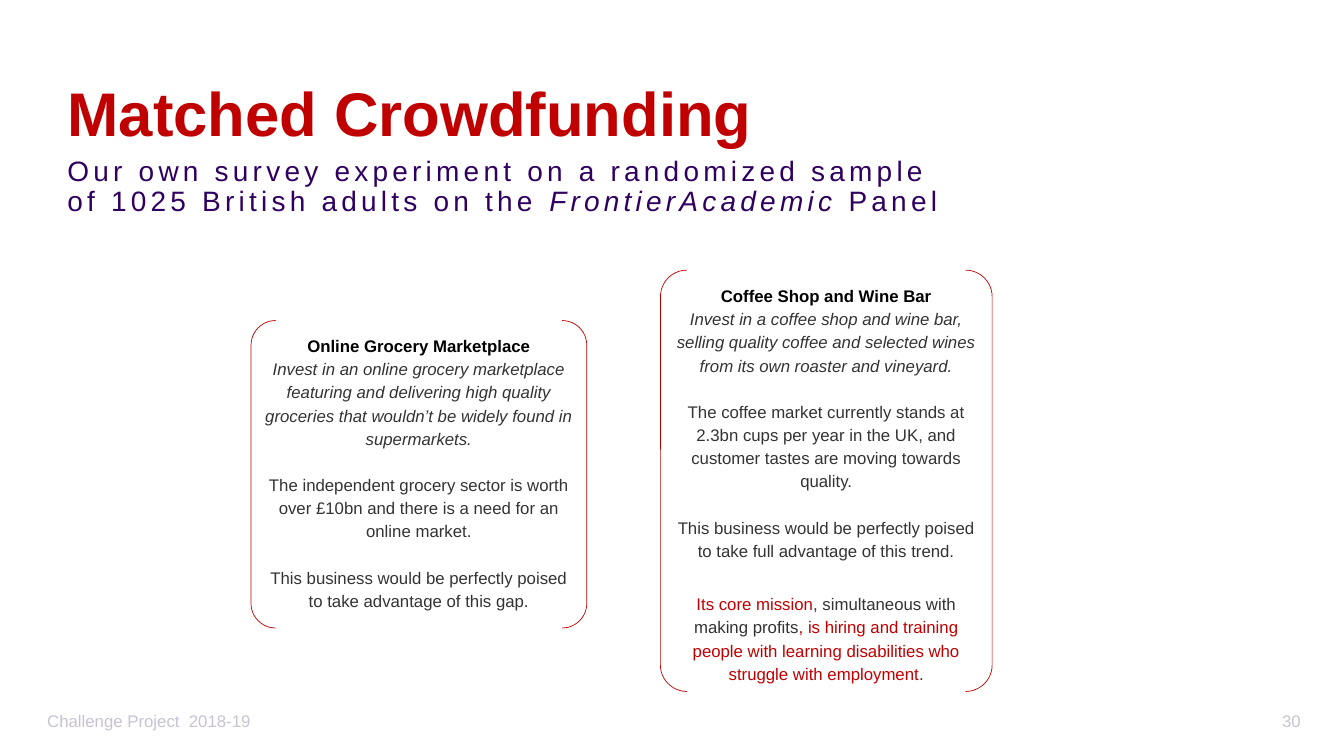
from dataclasses import dataclass

from pptx import Presentation
from pptx.dml.color import RGBColor
from pptx.enum.shapes import MSO_SHAPE
from pptx.enum.text import MSO_ANCHOR, PP_ALIGN
from pptx.slide import Slide
from pptx.text.text import Font, TextFrame, _Paragraph
from pptx.util import Inches, Pt

FONT = "Arial"
RED, PURPLE, PALE = "C00000", "300061", "C9C2D1"
BLACK, GREY = "000000", "333333"


@dataclass(frozen=True)
class Words:
    text: str
    size: float = 12
    color: str = GREY
    bold: bool = False
    italic: bool = False
    tracking: float = 0


@dataclass(frozen=True)
class Passage:
    words: tuple[Words, ...]
    gap_before: float = 0


@dataclass(frozen=True)
class Box:
    left: float
    top: float
    width: float
    height: float

    def lengths(self) -> tuple[int, int, int, int]:
        return (Inches(self.left), Inches(self.top),
                Inches(self.width), Inches(self.height))


@dataclass(frozen=True)
class Venture:
    box: Box
    passages: tuple[Passage, ...]


@dataclass(frozen=True)
class FooterItem:
    box: Box
    text: str
    align: PP_ALIGN


def set_color(font: Font, color: str) -> None:
    font.color.rgb = RGBColor.from_string(color)


def add_words(paragraph: _Paragraph, words: Words) -> None:
    run = paragraph.add_run()
    run.text = words.text
    run.font.name = FONT
    run.font.size = Pt(words.size)
    run.font.bold = words.bold
    run.font.italic = words.italic
    set_color(run.font, words.color)
    if words.tracking:
        run.font._element.set("spc", str(round(words.tracking * 100)))


def fill_frame(frame: TextFrame, passages: tuple[Passage, ...], align: PP_ALIGN,
               spacing: float, anchor: MSO_ANCHOR) -> None:
    frame.word_wrap = True
    frame.vertical_anchor = anchor
    for index, passage in enumerate(passages):
        paragraph = frame.add_paragraph() if index else frame.paragraphs[0]
        paragraph.alignment = align
        paragraph.line_spacing = spacing
        paragraph.space_before = Pt(passage.gap_before)
        for words in passage.words:
            add_words(paragraph, words)


def add_text(slide: Slide, box: Box, words: tuple[Words, ...], align: PP_ALIGN,
             spacing: float, anchor: MSO_ANCHOR) -> None:
    frame = slide.shapes.add_textbox(*box.lengths()).text_frame
    fill_frame(frame, (Passage(words),), align, spacing, anchor)


def add_title(slide: Slide, box: Box, words: Words) -> None:
    title = slide.shapes.title
    title.left, title.top, title.width, title.height = box.lengths()
    frame = title.text_frame
    frame.margin_bottom = 0
    fill_frame(frame, (Passage((words,)),), PP_ALIGN.LEFT, 0.9, MSO_ANCHOR.BOTTOM)


def add_venture(slide: Slide, venture: Venture) -> None:
    bracket = slide.shapes.add_shape(MSO_SHAPE.DOUBLE_BRACKET, *venture.box.lengths())
    bracket.adjustments[0] = 0.08
    bracket.shadow.inherit = False
    bracket.fill.background()
    bracket.line.color.rgb = RGBColor.from_string(RED)
    bracket.line.width = Pt(0.5)
    frame = bracket.text_frame
    frame.margin_left = frame.margin_right = Inches(0.05)
    frame.margin_top = frame.margin_bottom = Inches(0.05)
    fill_frame(frame, venture.passages, PP_ALIGN.CENTER, 1.15, MSO_ANCHOR.TOP)


def heading(text: str) -> Passage:
    return Passage((Words(text, color=BLACK, bold=True),))


def pitch(text: str) -> Passage:
    return Passage((Words(text, italic=True),))


def argument(text: str) -> Passage:
    return Passage((Words(text),), gap_before=16.5)


SUBTITLE = (
    Words("Our own survey experiment on a randomized sample of 1025 British adults on the ",
          20, PURPLE, tracking=3),
    Words("FrontierAcademic", 20, PURPLE, italic=True, tracking=3),
    Words(" Panel", 20, PURPLE, tracking=3),
)

VENTURES = (
    Venture(Box(2.49, 3.18, 3.33, 3.05), (
        heading("Online Grocery Marketplace"),
        pitch("Invest in an online grocery marketplace featuring and delivering high "
              "quality groceries that wouldn’t be widely found in supermarkets."),
        argument("The independent grocery sector is worth over £10bn and there is a need "
                 "for an online market."),
        argument("This business would be perfectly poised to take advantage of this gap."),
    )),
    Venture(Box(6.55, 2.68, 3.29, 4.18), (
        heading("Coffee Shop and Wine Bar"),
        pitch("Invest in a coffee shop and wine bar, selling quality coffee and selected "
              "wines from its own roaster and vineyard."),
        argument("The coffee market currently stands at 2.3bn cups per year in the UK, and "
                 "customer tastes are moving towards quality."),
        argument("This business would be perfectly poised to take full advantage of this "
                 "trend."),
        Passage((
            Words("Its core mission", color=RED),
            Words(", simultaneous with making profits"),
            Words(", is hiring and training people with learning disabilities who "
                  "struggle with employment", color=RED),
            Words("."),
        ), gap_before=21.5),
    )),
)

FOOTER = (
    FooterItem(Box(0.37, 6.95, 4.5, 0.4), "Challenge Project  2018-19", PP_ALIGN.LEFT),
    FooterItem(Box(12.19, 6.95, 0.81, 0.4), "30", PP_ALIGN.RIGHT),
)


def main() -> None:
    presentation = Presentation()
    presentation.slide_width = Inches(13.33)
    presentation.slide_height = Inches(7.5)
    slide = presentation.slides.add_slide(presentation.slide_layouts[5])

    # Title and subtitle
    add_title(slide, Box(0.57, 0.23, 9.11, 1.26),
              Words("Matched Crowdfunding", 44, RED, bold=True))
    add_text(slide, Box(0.57, 1.51, 8.97, 0.67), SUBTITLE,
             PP_ALIGN.LEFT, 0.9, MSO_ANCHOR.TOP)

    # Bracketed investment pitches
    for venture in VENTURES:
        add_venture(slide, venture)

    # Footer and page number
    for item in FOOTER:
        add_text(slide, item.box, (Words(item.text, color=PALE),),
                 item.align, 1.0, MSO_ANCHOR.MIDDLE)

    presentation.save("out.pptx")


if __name__ == "__main__":
    main()
